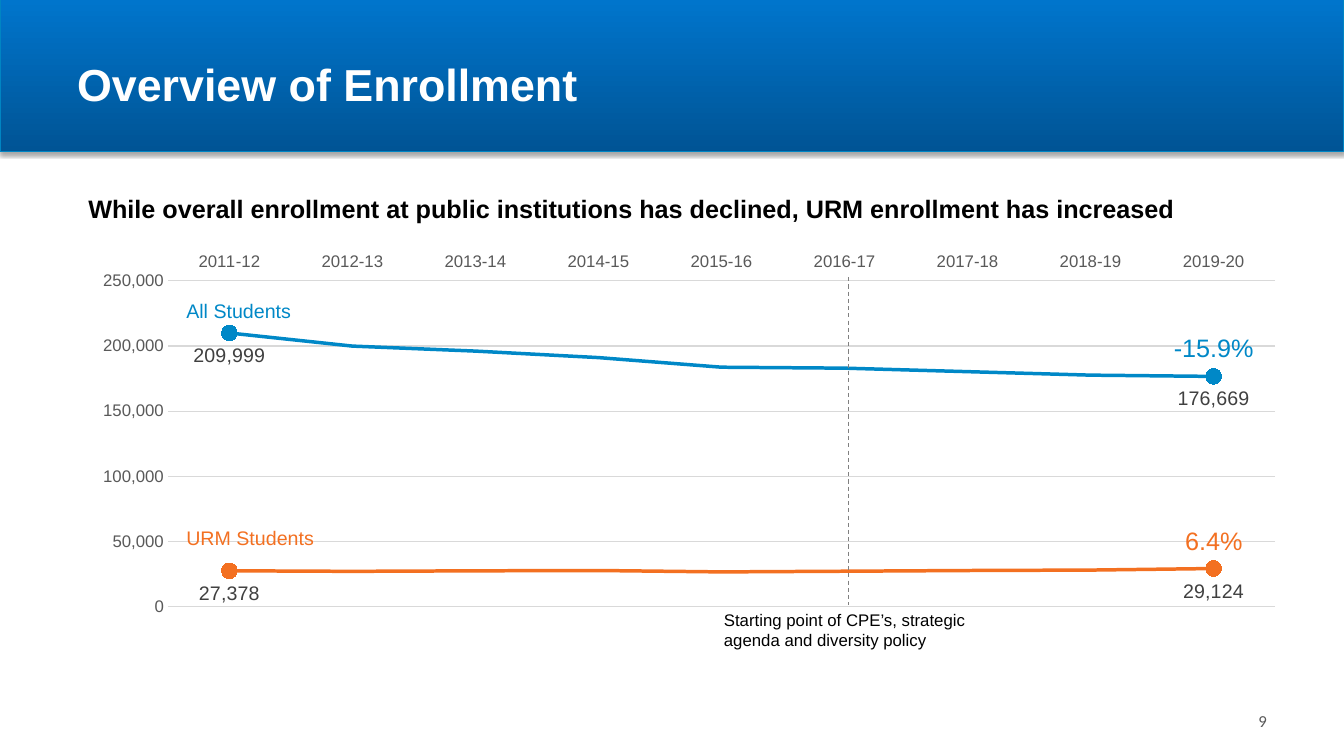
"""Build the enrollment overview slide: header band, line chart and labels."""
from lxml import etree
from pptx import Presentation
from pptx.chart.data import CategoryChartData
from pptx.dml.color import RGBColor
from pptx.enum.chart import (XL_CHART_TYPE, XL_LABEL_POSITION, XL_MARKER_STYLE,
                             XL_TICK_LABEL_POSITION, XL_TICK_MARK)
from pptx.enum.dml import MSO_LINE
from pptx.enum.shapes import MSO_CONNECTOR, MSO_SHAPE
from pptx.enum.text import MSO_ANCHOR, PP_ALIGN
from pptx.oxml import parse_xml
from pptx.oxml.ns import nsdecls, qn
from pptx.util import Pt

LEFT, CENTER, RIGHT = PP_ALIGN.LEFT, PP_ALIGN.CENTER, PP_ALIGN.RIGHT
TOP, MIDDLE = MSO_ANCHOR.TOP, MSO_ANCHOR.MIDDLE
NO_TICK = XL_TICK_MARK.NONE
NO_MARKER, CIRCLE = XL_MARKER_STYLE.NONE, XL_MARKER_STYLE.CIRCLE
BLUE, ORANGE, GRAY, GRID = "0088C7", "F37021", "595959", "D9D9D9"


def rgb(value):
    return RGBColor.from_string(value)


def style(target, color, **values):
    target.color.rgb = rgb(color)
    for name, value in values.items():
        setattr(target, name, value)


prs = Presentation()
prs.slide_width, prs.slide_height = Pt(960), Pt(540)
s = prs.slides.add_slide(prs.slide_layouts[6])

band = s.shapes.add_shape(MSO_SHAPE.RECTANGLE, 0, 0, Pt(960), Pt(108))
band.fill.gradient()
band.fill.gradient_angle = 90
for stop, color in zip(band.fill.gradient_stops, ("005495", "0075CC")):
    stop.color.rgb = rgb(color)
style(band.line, "0085C3", width=Pt(0.75))
band.shadow.inherit = False
effects = band._element.spPr.find(qn("a:effectLst"))
effects.append(parse_xml(
    f'<a:outerShdw {nsdecls("a")} blurRad="{Pt(3.1)}" dist="{Pt(1.8)}" dir="5400000" rotWithShape="0">'
    '<a:srgbClr val="000000"><a:alpha val="35000"/></a:srgbClr></a:outerShdw>'))

data = CategoryChartData(number_format="#,##0")
data.categories = [f"{year}-{year - 1999}" for year in range(2011, 2020)]
data.add_series("All Students", (209999, 199939, 196113, 191121, 183749,
                                 183015, 180334, 177631, 176669))
data.add_series("URM Students", (27378, 26963, 27344, 27607, 26515,
                                 27036, 27596, 27932, 29124))
chart = s.shapes.add_chart(XL_CHART_TYPE.LINE_MARKERS, Pt(66), Pt(134.5),
                           Pt(856), Pt(354), data).chart
chart.has_legend = chart.has_title = False
style(chart.font, "000000", size=Pt(10), name="Arial")

for axis in (chart.category_axis, chart.value_axis):
    axis.major_tick_mark = axis.minor_tick_mark = NO_TICK
    style(axis.tick_labels.font, GRAY, size=Pt(12), name="Arial")
cat, val = chart.category_axis, chart.value_axis
cat.tick_label_position = XL_TICK_LABEL_POSITION.HIGH
style(cat.format.line, GRID, width=Pt(0.75))
val.minimum_scale, val.maximum_scale, val.major_unit = 0, 250000, 50000
val.tick_labels.number_format = "#,##0"
val.tick_labels.number_format_is_linked = False
val.format.line.fill.background()
style(val.major_gridlines.format.line, GRID, width=Pt(0.75))

plot_area = chart._chartSpace.chart.plotArea
for old in plot_area.findall(qn("c:layout")):
    plot_area.remove(old)
layout = parse_xml(f'<c:layout {nsdecls("c")}><c:manualLayout/></c:layout>')
for tag, value in (("layoutTarget", "inner"), ("xMode", "edge"), ("yMode", "edge"),
                   ("x", 0.063), ("y", 0.187), ("w", 0.924), ("h", 0.657)):
    etree.SubElement(layout[0], qn(f"c:{tag}")).set("val", str(value))
plot_area.insert(0, layout)

chart.plots[0].vary_by_categories = False
for series, color in zip(chart.plots[0].series, (BLUE, ORANGE)):
    series.smooth = False
    series.marker.style = NO_MARKER
    style(series.format.line, color, width=Pt(2.5))
    series.data_labels.show_value = False
    for index in (0, 8):
        point = series.points[index]
        style(point.format.line, color, width=Pt(2.5))
        point.marker.style, point.marker.size = CIRCLE, 11
        point.marker.format.fill.solid()
        point.marker.format.fill.fore_color.rgb = rgb(color)
        style(point.marker.format.line, color)
        style(point.data_label.font, "404040", size=Pt(14), name="Arial")
        point.data_label.position = XL_LABEL_POSITION.BELOW

texts = [
    ("Overview of Enrollment", 48, 12, 864, 96, 32, "FFFFFF", True, LEFT, MIDDLE, "Arial"),
    ("While overall enrollment at public institutions has declined, URM enrollment has increased",
     56, 134.5, 866, 29, 18, "000000", True, LEFT, TOP, "Arial"),
    ("All Students", 126, 210, 150, 24, 14, BLUE, False, LEFT, TOP, "Arial"),
    ("URM Students", 126, 372, 150, 24, 14, ORANGE, False, LEFT, TOP, "Arial"),
    ("-15.9%", 828, 234, 78, 29, 18, BLUE, False, CENTER, TOP, "Arial"),
    ("6.4%", 828, 371.5, 78, 29, 18, ORANGE, False, CENTER, TOP, "Arial"),
    ("9", 872, 500.5, 40, 29, 12, GRAY, False, RIGHT, MIDDLE, "Calibri"),
    ("Starting point of CPE’s, strategic agenda and diversity policy",
     510, 432, 192, 36, 12, "000000", False, LEFT, TOP, "Arial"),
]
for text, x, y, w, h, size, color, bold, align, anchor, font in texts:
    box = s.shapes.add_textbox(Pt(x), Pt(y), Pt(w), Pt(h))
    tf = box.text_frame
    tf.word_wrap, tf.vertical_anchor = True, anchor
    p = tf.paragraphs[0]
    p.alignment = align
    r = p.add_run()
    r.text = text
    style(r.font, color, size=Pt(size), bold=bold, name=font)

policy_line = s.shapes.add_connector(MSO_CONNECTOR.STRAIGHT, Pt(606), Pt(198), Pt(606), Pt(432))
policy_line.end_connect(box, 0)
style(policy_line.line, "808080", width=Pt(0.75), dash_style=MSO_LINE.DASH)
etree.SubElement(policy_line._element.spPr, qn("a:effectLst"))

prs.save("out.pptx")
